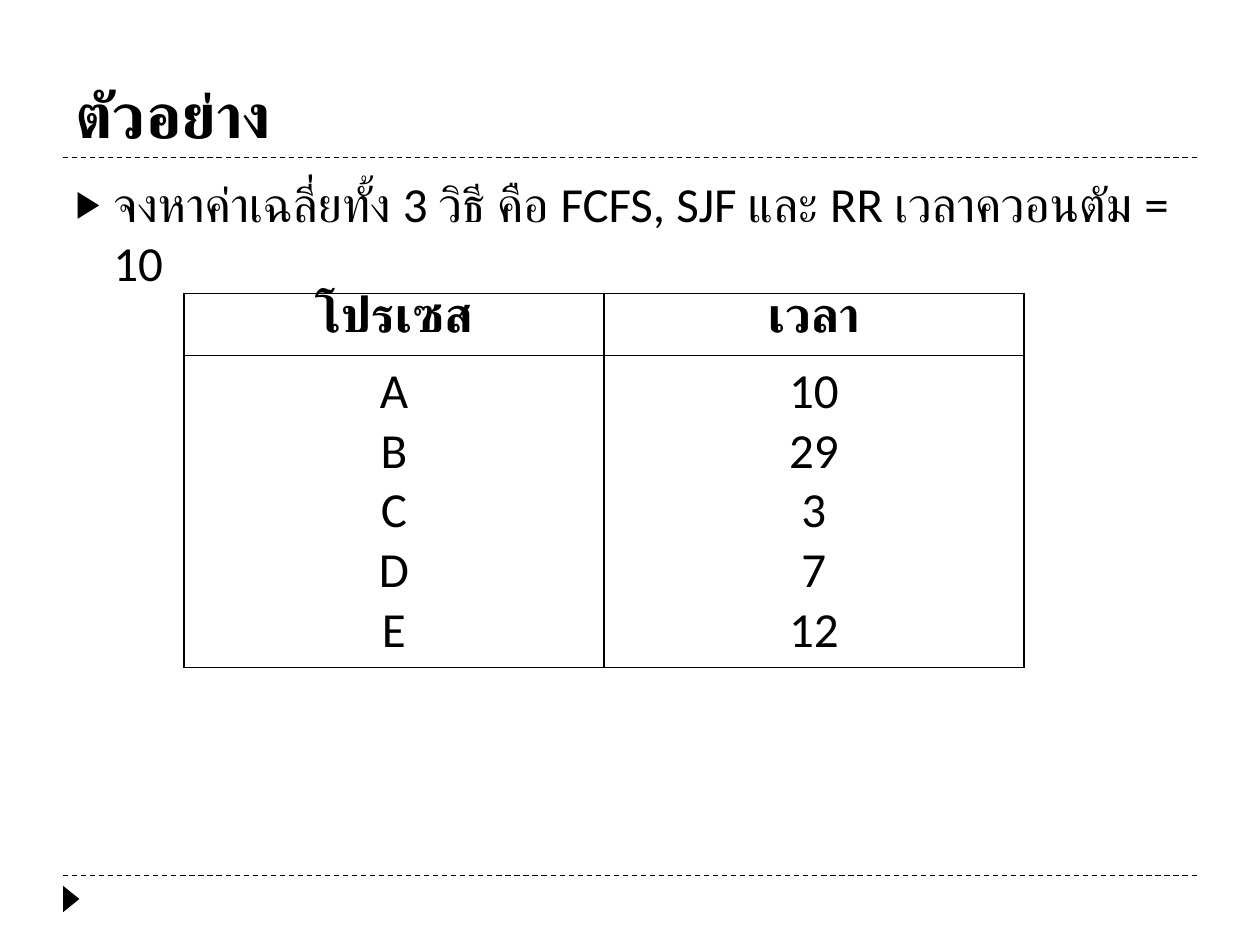
import pptx
import pptx.util
import pptx.dml.color
import pptx.enum.dml
import pptx.enum.shapes
import pptx.enum.text
import pptx.oxml
import pptx.oxml.ns

WIDTH, HEIGHT = 10, 7.5
INK = "000000"
NS = pptx.oxml.ns.nsdecls("a")
ALIGN = pptx.enum.text.PP_ALIGN
PROCESS_TIMES = {"A": 10, "B": 29, "C": 3, "D": 7, "E": 12}


def colour(hex_code):
    return pptx.dml.color.RGBColor.from_string(hex_code)


def inches(*lengths):
    return [pptx.util.Inches(length) for length in lengths]


def set_all(target, formats):
    for name, value in formats.items():
        setattr(target, name, value)


def write_lines(frame, lines, size, bold=False, align=ALIGN.LEFT):
    for index, line in enumerate(lines):
        paragraph = frame.paragraphs[0] if index == 0 else frame.add_paragraph()
        set_all(paragraph, {"alignment": align, "space_before": pptx.util.Pt(0)})
        run = paragraph.add_run()
        run.text = line
        set_all(run.font, {"name": "Calibri", "size": pptx.util.Pt(size), "bold": bold})
        run.font.color.rgb = colour(INK)


def fill_placeholder(holder, box, text, anchor, size, bold=False):
    set_all(holder, dict(zip(("left", "top", "width", "height"), inches(*box))))
    set_all(holder.text_frame, {
        "word_wrap": True,
        "auto_size": pptx.enum.text.MSO_AUTO_SIZE.NONE,
        "vertical_anchor": anchor,
    })
    write_lines(holder.text_frame, [text], size, bold)
    return holder.text_frame.paragraphs[0]


def add_bullet(paragraph):
    paragraph.space_before = pptx.util.Pt(6)
    properties = paragraph._p.get_or_add_pPr()
    indent = pptx.util.Inches(0.3)
    properties.set("marL", str(indent))
    properties.set("indent", str(-indent))
    for element in (
        f'<a:buClr {NS}><a:srgbClr val="{INK}"/></a:buClr>',
        f'<a:buSzPct {NS} val="76000"/>',
        f'<a:buChar {NS} char="▶"/>',
    ):
        properties.append(pptx.oxml.parse_xml(element))


def add_rule(slide, left, right, y):
    rule = slide.shapes.add_connector(
        pptx.enum.shapes.MSO_CONNECTOR.STRAIGHT, *inches(left, y, right, y))
    set_all(rule.line, {
        "width": pptx.util.Pt(0.75),
        "dash_style": pptx.enum.dml.MSO_LINE.DASH,
    })
    rule.line.color.rgb = colour(INK)
    rule._element.spPr.append(pptx.oxml.parse_xml(f"<a:effectLst {NS}/>"))


def add_footer_marker(slide, box):
    marker = slide.shapes.add_shape(
        pptx.enum.shapes.MSO_SHAPE.ISOSCELES_TRIANGLE, *inches(*box))
    marker.rotation = 90
    marker.shadow.inherit = False
    marker.fill.solid()
    marker.fill.fore_color.rgb = colour(INK)
    marker.line.fill.background()


def add_borders(cell):
    properties = cell._tc.get_or_add_tcPr()
    for side in ("lnL", "lnR", "lnT", "lnB"):
        properties.append(pptx.oxml.parse_xml(
            f'<a:{side} {NS} w="{pptx.util.Pt(1)}"><a:solidFill>'
            f'<a:srgbClr val="{INK}"/></a:solidFill></a:{side}>'))


def add_process_table(slide, box, header_height):
    left, top, width, height = box
    table = slide.shapes.add_table(2, 2, *inches(*box)).table
    set_all(table, {"first_row": False, "horz_banding": False})
    for column in table.columns:
        column.width = pptx.util.Inches(width / 2)
    row_heights = inches(header_height, height - header_height)
    for row, row_height in zip(table.rows, row_heights):
        row.height = row_height
    contents = [
        [["โปรเซส"], ["เวลา"]],
        [list(PROCESS_TIMES), [str(time) for time in PROCESS_TIMES.values()]],
    ]
    for row_index, row in enumerate(contents):
        is_header = row_index == 0
        padding = pptx.util.Inches(0 if is_header else 0.05)
        for column_index, lines in enumerate(row):
            cell = table.cell(row_index, column_index)
            set_all(cell, {"margin_top": padding, "margin_bottom": padding})
            add_borders(cell)
            cell.fill.background()
            write_lines(cell.text_frame, lines, 28, is_header, ALIGN.CENTER)


def build_example_slide(deck):
    slide = deck.slides.add_slide(deck.slide_layouts[1])
    margin = 0.05 * WIDTH
    content_width = WIDTH - 2 * margin
    title_rule, footer_rule = 1.25, 6.95
    anchors = pptx.enum.text.MSO_ANCHOR

    # Dashed rules and footer marker
    for y in (footer_rule, title_rule):
        add_rule(slide, margin, WIDTH - margin, y)
    add_footer_marker(slide, (0.46, footer_rule + 0.12, 0.21, 0.13))

    # Title and question
    fill_placeholder(slide.shapes.title, (margin, 0.17, content_width, 1.08),
                     "ตัวอย่าง", anchors.BOTTOM, 36, True)
    question = fill_placeholder(
        slide.placeholders[1], (margin, 1.33, content_width, 0.72 * HEIGHT),
        "จงหาค่าเฉลี่ยทั้ง 3 วิธี คือ FCFS, SJF และ RR เวลาควอนตัม = 10",
        anchors.TOP, 28)
    add_bullet(question)

    # Processes and their times
    add_process_table(slide, (1.46, 2.33, WIDTH * 2 / 3, 2.97), 0.49)


def main():
    deck = pptx.Presentation()
    deck.slide_width, deck.slide_height = inches(WIDTH, HEIGHT)
    build_example_slide(deck)
    deck.save("out.pptx")


if __name__ == "__main__":
    main()
